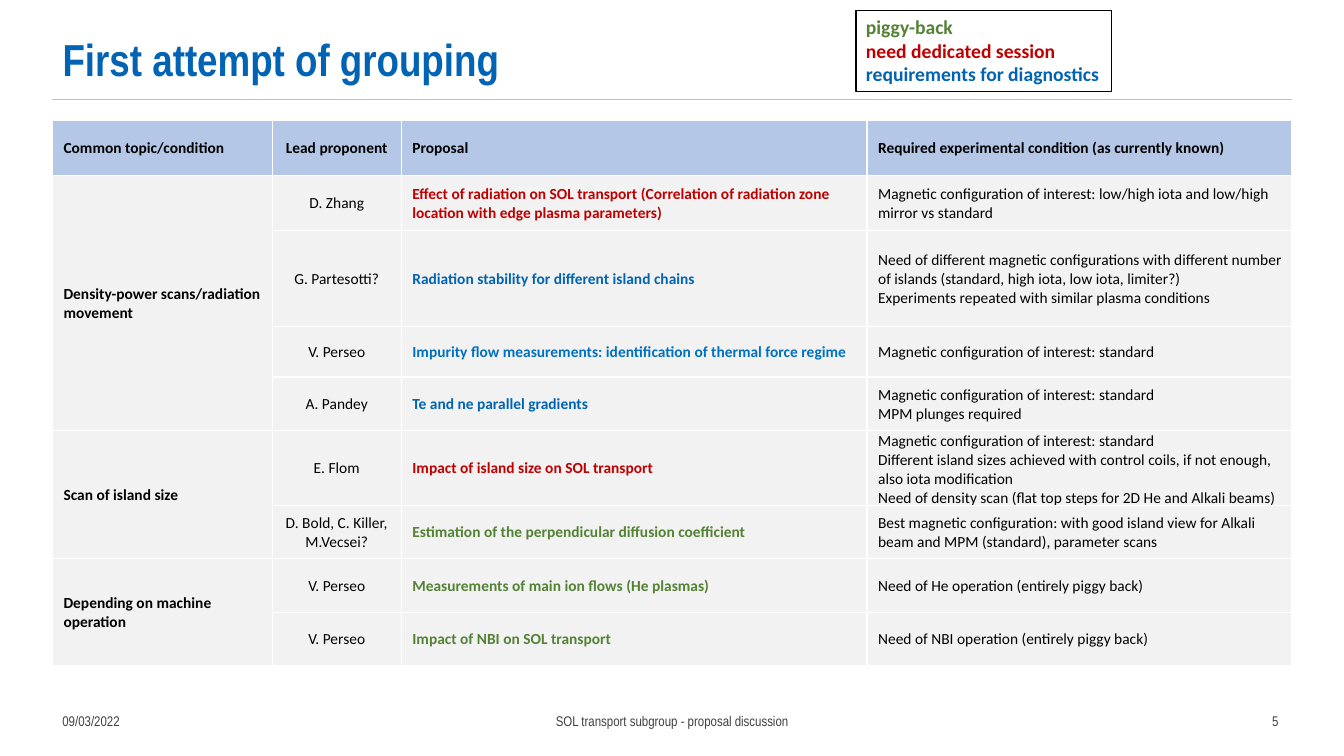
from copy import deepcopy
from dataclasses import dataclass

from lxml.etree import SubElement as Sub
from pptx import Presentation
from pptx.dml.color import RGBColor as Rgb
from pptx.enum.shapes import MSO_CONNECTOR as Conn, MSO_SHAPE as Kind
from pptx.enum.text import MSO_ANCHOR as Anchor, MSO_AUTO_SIZE as Fit, PP_ALIGN as Align
from pptx.oxml.ns import qn
from pptx.util import Inches, Pt

COLS, ROWS = 1333, 750  # slide grid
UNIT = Inches(0.01)     # side of one grid cell


@dataclass(frozen=True)
class Theme:
    blue: str = "0063B3"
    sky: str = "0070C0"
    red: str = "C00000"
    green: str = "548235"
    black: str = "000000"
    gray: str = "404040"
    rule: str = "BFBFBF"
    head: str = "B4C7E7"
    body: str = "F2F2F2"
    white: str = "FFFFFF"
    narrow: str = "Arial Narrow"
    sans: str = "Calibri"
    title: int = 32
    legend: int = 14
    cell: int = 11
    foot: int = 10


T = Theme()
LEFT, WIDE = 52, 1229
PAD = 1
INDENT = 10
WIDTHS = [218, 128, 462, 421]
HEIGHTS = [55, 55, 95, 50, 53, 53, 53, 53, 53]
HEADS = ["Common topic/condition", "Lead proponent", "Proposal",
         "Required experimental condition (as currently known)"]
# topic -> (lead, proposal, colour, condition); \v breaks a line, \n a paragraph
TOPICS = {
    "Density-power scans/radiation movement": [
        ("D. Zhang", "Effect of radiation on SOL transport (Correlation of radiation "
         "zone location with edge plasma parameters)", T.red,
         "Magnetic configuration of interest: low/high iota and low/high mirror vs standard"),
        ("G. Partesotti?", "Radiation stability for different island chains", T.blue,
         "Need of different magnetic configurations with different number of islands "
         "(standard, high iota, low iota, limiter?)\v"
         "Experiments repeated with similar plasma conditions"),
        ("V. Perseo", "Impurity flow measurements: identification of thermal force regime",
         T.sky, "Magnetic configuration of interest: standard"),
        ("A. Pandey", "Te and ne parallel gradients", T.blue,
         "Magnetic configuration of interest: standard\vMPM plunges required"),
    ],
    "Scan of island size": [
        ("E. Flom", "Impact of island size on SOL transport", T.red,
         "Magnetic configuration of interest: standard\n"
         "Different island sizes achieved with control coils, if not enough, "
         "also iota modification\v"
         "Need of density scan (flat top steps for 2D He and Alkali beams)"),
        ("D. Bold, C. Killer, M.Vecsei?",
         "Estimation of the perpendicular diffusion coefficient", T.green,
         "Best magnetic configuration: with good island view for Alkali beam and MPM "
         "(standard), parameter scans"),
    ],
    "Depending on machine operation": [
        ("V. Perseo", "Measurements of main ion flows (He plasmas)", T.green,
         "Need of He operation (entirely piggy back)"),
        ("V. Perseo", "Impact of NBI on SOL transport", T.green,
         "Need of NBI operation (entirely piggy back)"),
    ],
}


def scale(box):
    return [n * UNIT for n in box]


def assign(item, values):
    for name, value in values.items():
        setattr(item, name, value)


def style(para, color, size, face, bold=False, align=Align.LEFT):
    para.alignment = align
    for run in para.runs:
        assign(run.font, {"name": face, "size": Pt(size), "bold": bold})
        run.font.color.rgb = Rgb.from_string(color)
    for brk in para._p.findall(qn("a:br")):
        brk.append(deepcopy(para.runs[0]._r.rPr))


def head(slide, box):
    title = slide.shapes.title
    assign(title, dict(zip(("left", "top", "width", "height"), scale(box))))
    frame = title.text_frame
    frame.text = "First attempt of grouping"
    assign(frame, {"vertical_anchor": Anchor.BOTTOM, "auto_size": Fit.NONE,
                   "word_wrap": True})
    para = frame.paragraphs[0]
    para.line_spacing = 0.9
    style(para, T.blue, T.title, T.narrow, True)


def rule(slide, left, top, width):
    line = slide.shapes.add_connector(Conn.STRAIGHT, *scale((left, top, left + width, top)))
    line.line.color.rgb = Rgb.from_string(T.rule)
    line.line.width = Pt(1)
    Sub(line._element.spPr, qn("a:effectLst"))


def legend(slide, box):
    rect = slide.shapes.add_shape(Kind.RECTANGLE, *scale(box))
    rect.shadow.inherit = False
    rect.fill.background()
    rect.line.color.rgb = Rgb.from_string(T.black)
    rect.line.width = Pt(0.75)
    frame = rect.text_frame
    items = {"piggy-back": T.green, "need dedicated session": T.red,
             "requirements for diagnostics": T.blue}
    frame.text = "\n".join(items)
    assign(frame, {"word_wrap": False, "auto_size": Fit.SHAPE_TO_FIT_TEXT,
                   "vertical_anchor": Anchor.TOP})
    for para, color in zip(frame.paragraphs, items.values()):
        style(para, color, T.legend, T.sans, True)


def border(cell):
    props = cell._tc.get_or_add_tcPr()
    for side in ("lnL", "lnR", "lnT", "lnB"):
        line = Sub(props, qn("a:" + side), w=str(Pt(1)))
        Sub(Sub(line, qn("a:solidFill")), qn("a:srgbClr"), val=T.white)


def dress(cell, fill):
    border(cell)
    cell.fill.solid()
    cell.fill.fore_color.rgb = Rgb.from_string(fill)
    assign(cell, {"vertical_anchor": Anchor.MIDDLE, "margin_left": PAD * UNIT,
                  "margin_right": PAD * UNIT, "margin_top": PAD * UNIT,
                  "margin_bottom": 0})


def write(cell, text, bold=False, color=T.black, lead=False):
    """Fill a cell; lead names are centred, all else is indented."""
    cell.text_frame.text = text
    for para in cell.text_frame.paragraphs:
        style(para, color, T.cell, T.sans, bold, Align.CENTER if lead else Align.LEFT)
        if not lead:
            props = para._p.get_or_add_pPr()
            props.set("marL", str(INDENT * UNIT))
            props.set("indent", "0")


def grid(slide, left, top):
    box = (left, top, sum(WIDTHS), sum(HEIGHTS))
    table = slide.shapes.add_table(len(HEIGHTS), len(WIDTHS), *scale(box)).table
    table.horz_banding = False
    for col, width in zip(table.columns, WIDTHS):
        col.width = width * UNIT
    for num, (row, height) in enumerate(zip(table.rows, HEIGHTS)):
        row.height = height * UNIT
        for cell in row.cells:
            dress(cell, T.body if num else T.head)
    for col, text in enumerate(HEADS):
        write(table.cell(0, col), text, True, lead=col == 1)
    row = 1
    for topic, plans in TOPICS.items():
        table.cell(row, 0).merge(table.cell(row + len(plans) - 1, 0))
        write(table.cell(row, 0), topic, True)
        for name, plan, color, need in plans:
            write(table.cell(row, 1), name, lead=True)
            write(table.cell(row, 2), plan, True, color)
            write(table.cell(row, 3), need)
            row += 1


def foot(slide, top, height):
    parts = [(LEFT, 122, "09/03/2022", Align.LEFT),
             (198, 937, "SOL transport subgroup - proposal discussion", Align.CENTER),
             (1163, 118, "5 ", Align.RIGHT)]
    for left, width, text, align in parts:
        frame = slide.shapes.add_textbox(*scale((left, top, width, height))).text_frame
        frame.text = text
        assign(frame, {"word_wrap": True, "vertical_anchor": Anchor.MIDDLE})
        style(frame.paragraphs[0], T.gray, T.foot, T.narrow, align=align)


def main():
    deck = Presentation()
    assign(deck, {"slide_width": COLS * UNIT, "slide_height": ROWS * UNIT})
    slide = deck.slides.add_slide(deck.slide_layouts[5])
    rule(slide, LEFT, 99, WIDE)
    head(slide, (LEFT, 21, 1039, 70))
    foot(slide, 695, 40)
    grid(slide, LEFT, 119)
    legend(slide, (849, 10, 253, 81))
    deck.save("out.pptx")


if __name__ == "__main__":
    main()
